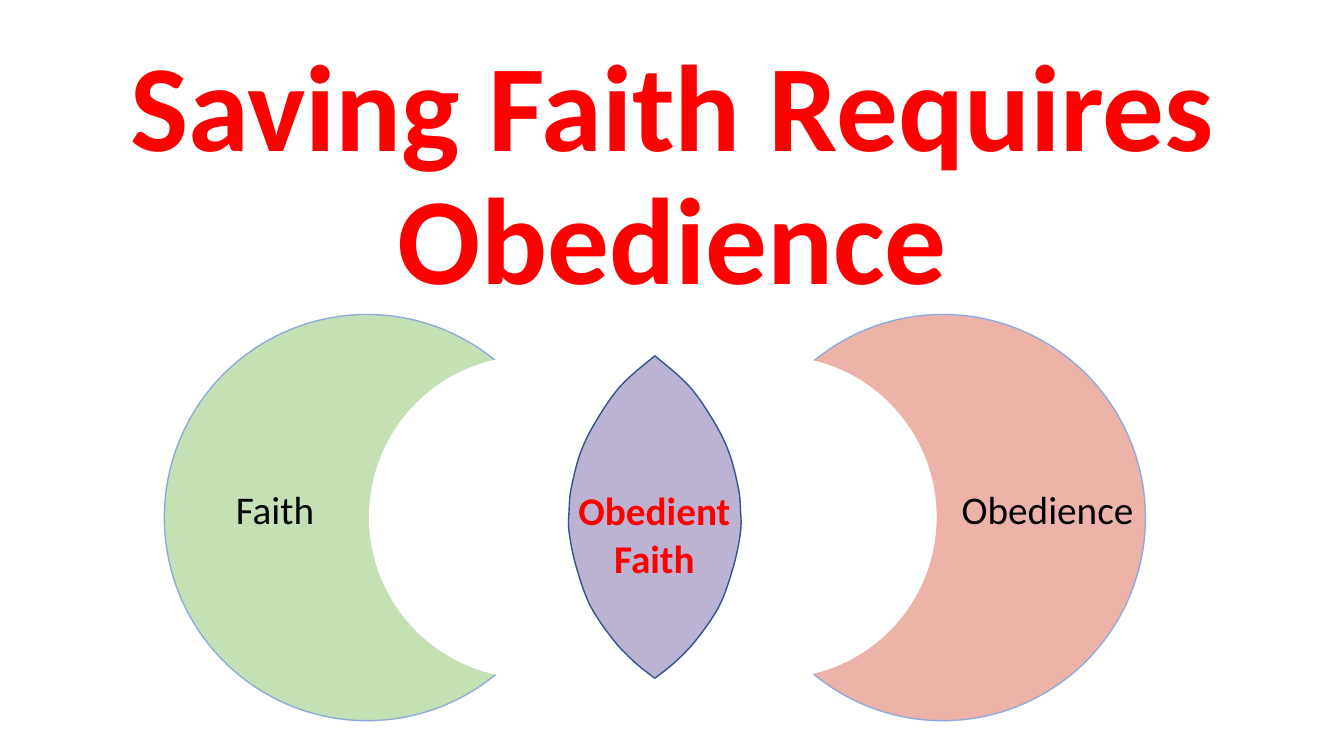
from pptx import Presentation
from pptx import util as u
from pptx.dml.color import RGBColor
from pptx.enum import shapes, text

RED = RGBColor(0xFF, 0x00, 0x00)
BLACK = RGBColor(0x00, 0x00, 0x00)
WHITE = RGBColor(0xFF, 0xFF, 0xFF)
GREEN = RGBColor(0xC5, 0xE0, 0xB4)
PINK = RGBColor(0xED, 0xB3, 0xA9)
PURPLE = RGBColor(0xBB, 0xB3, 0xD1)
PALE_BLUE = RGBColor(0x8F, 0xAA, 0xDC)
DARK_BLUE = RGBColor(0x32, 0x54, 0x91)

# Distance out from the lens axis and down from its tip
LENS_EDGE = [(0, 0), (0.34, 0.3), (0.59, 0.66), (0.74, 0.97), (0.83, 1.32),
             (0.85, 1.53), (0.85, 1.75), (0.78, 2.09), (0.64, 2.48),
             (0.41, 2.82), (0.2, 3.04), (0, 3.2)]
CURVE_STEPS = 6


def add_label(page, words, left, top, width, height, size=28, color=BLACK,
              bold=False, align=text.PP_ALIGN.LEFT, wrap=False, spacing=None):
    box = page.shapes.add_textbox(*map(u.Inches, (left, top, width, height)))
    frame = box.text_frame
    frame.word_wrap = wrap
    frame.vertical_anchor = text.MSO_ANCHOR.TOP
    if not wrap:
        frame.auto_size = text.MSO_AUTO_SIZE.SHAPE_TO_FIT_TEXT
    for index, line in enumerate(words.split("\n")):
        para = frame.paragraphs[0] if index == 0 else frame.add_paragraph()
        para.alignment = align
        if spacing:
            para.line_spacing = spacing
        span = para.add_run()
        span.text = line
        span.font.name = "Calibri"
        span.font.size = u.Pt(size)
        span.font.bold = bold
        span.font.color.rgb = color


def paint(shape, fill, line=None):
    shape.shadow.inherit = False
    shape.fill.solid()
    shape.fill.fore_color.rgb = fill
    if line is None:
        shape.line.fill.background()
    else:
        shape.line.color.rgb = line
        shape.line.width = u.Pt(1)


def add_circle(page, left, top, width, height, fill, line=None):
    circle = page.shapes.add_shape(
        shapes.MSO_SHAPE.OVAL, *map(u.Inches, (left, top, width, height)))
    paint(circle, fill, line)


def add_crescent(page, left, top, fill, bite_shift):
    """Draw a disc and the white disc, shifted sideways, that cuts into it."""
    add_circle(page, left, top, 4.02, 4.03, fill, PALE_BLUE)
    add_circle(page, left + bite_shift, top + 0.41, 3.2, 3.2, WHITE)


def smooth(points):
    """Return points along a Catmull-Rom curve through the given points."""
    padded = [points[0], *points, points[-1]]
    curve = [points[0]]
    for before, start, end, after in zip(padded, padded[1:], padded[2:], padded[3:]):
        for step in range(1, CURVE_STEPS + 1):
            t = step / CURVE_STEPS
            curve.append(tuple(
                b + t * (c - a) / 2 + t * t * (2 * a - 5 * b + 4 * c - d) / 2
                + t ** 3 * (3 * b - a - 3 * c + d) / 2
                for a, b, c, d in zip(before, start, end, after)))
    return curve


def add_lens(page, axis, top):
    for side in (-1, 1):
        edge = [(u.Inches(axis + side * out), u.Inches(top + down))
                for out, down in smooth(LENS_EDGE)]
        builder = page.shapes.build_freeform(*edge[0])
        builder.add_line_segments(edge[1:], close=False)
        paint(builder.convert_to_shape(), PURPLE, DARK_BLUE)


def add_venn(page, left, top):
    add_crescent(page, left, top, GREEN, 2.03)
    add_crescent(page, left + 5.71, top, PINK, -1.25)
    add_lens(page, left + 4.865, top + 0.41)
    add_label(page, "Obedient\nFaith", left + 4, top + 1.66, 1.72, 1.04,
              color=RED, bold=True, align=text.PP_ALIGN.CENTER)
    add_label(page, "Faith", left + 0.61, top + 1.65, 0.99, 0.57)
    add_label(page, "Obedience", left + 7.81, top + 1.65, 1.92, 0.57)


def main():
    deck = Presentation()
    deck.slide_width, deck.slide_height = u.Inches(13.33), u.Inches(7.5)
    page = deck.slides.add_slide(deck.slide_layouts[6])
    add_label(page, "Saving Faith Requires Obedience", 0.92, 0.4, 11.5, 6.2,
              size=88, color=RED, bold=True, align=text.PP_ALIGN.CENTER,
              wrap=True, spacing=0.9)
    add_venn(page, 1.63, 3.12)
    deck.save("out.pptx")


if __name__ == "__main__":
    main()
